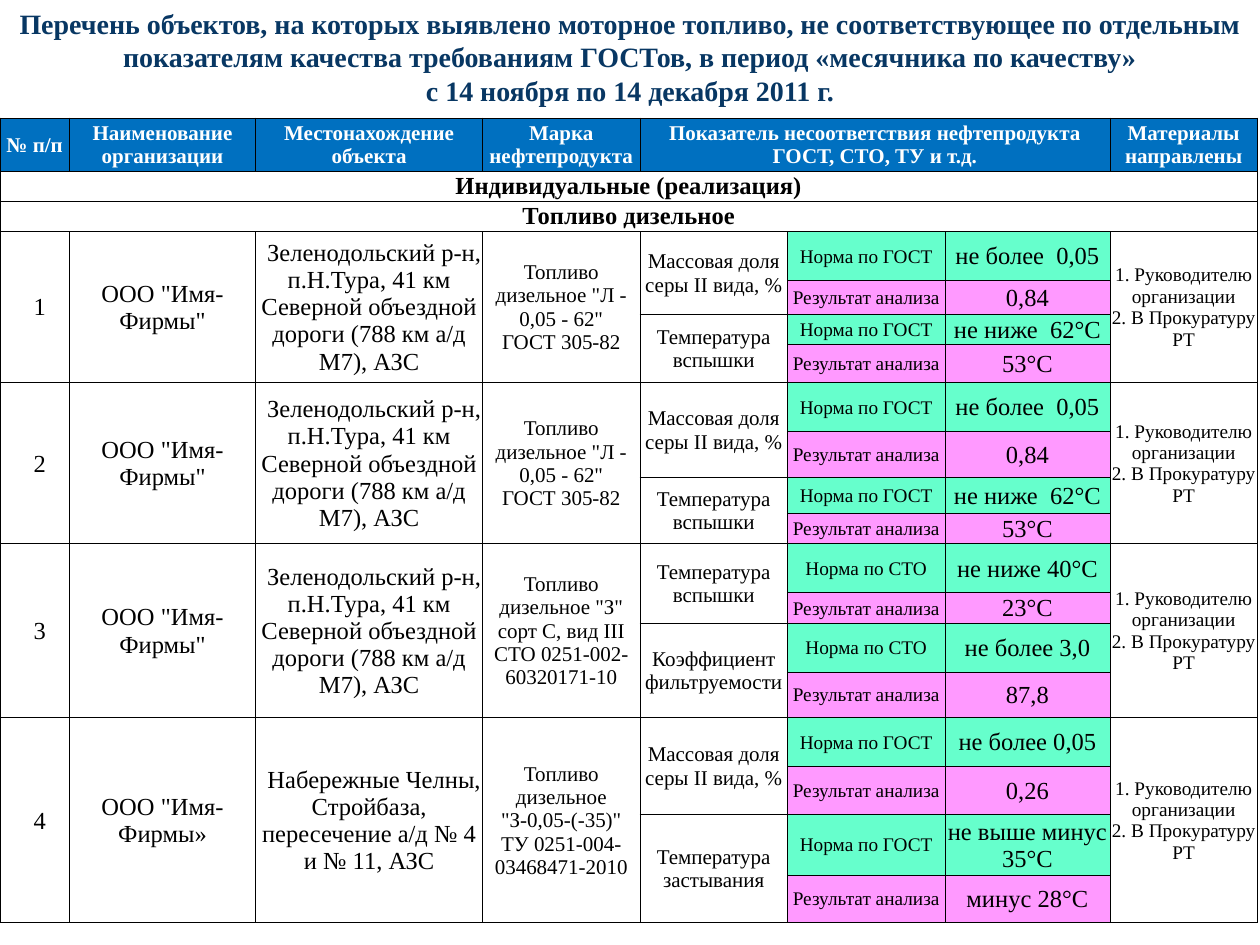
from dataclasses import dataclass

from lxml.etree import SubElement as Sub
from pptx import Presentation
from pptx.dml.color import RGBColor
from pptx.enum.text import MSO_ANCHOR as Anchor, MSO_AUTO_SIZE as Fit, PP_ALIGN as Align
from pptx.oxml.ns import qn
from pptx.util import Inches, Pt

FONT = "Times New Roman"
NAVY = RGBColor(0x08, 0x37, 0x63)
BLUE = RGBColor(0x00, 0x70, 0xC0)
MINT = RGBColor(0x66, 0xFF, 0xCC)
PINK = RGBColor(0xFF, 0x99, 0xFF)
BLACK = RGBColor(0, 0, 0)
WHITE = RGBColor(0xFF, 0xFF, 0xFF)

WIDE, HIGH = Inches(10), Inches(7.5)
TOP = 0.125  # share of the slide's height
COLS = [0.55, 1.48, 1.8, 1.25, 1.17, 1.25, 1.31, 1.17]
HEAD_ROWS = [0.42, 0.24, 0.24]
SPAN = 4  # table rows to one site

TITLE = (
    "Перечень объектов, на которых выявлено моторное топливо, не соответствующее "
    "по отдельным показателям качества требованиям ГОСТов, в период "
    "«месячника по качеству»\nс 14 ноября по 14 декабря 2011 г."
)
HEADS = {
    0: "№ п/п",
    1: "Наименование организации",
    2: "Местонахождение объекта",
    3: "Марка нефтепродукта",
    4: "Показатель несоответствия нефтепродукта ГОСТ, СТО, ТУ и т.д.",
    7: "Материалы направлены",
}
BANDS = ["Индивидуальные (реализация)", "Топливо дизельное"]
SENT = "1. Руководителю организации\n2. В Прокуратуру РТ"
TURA = ("Зеленодольский р-н, п.Н.Тура, 41 км Северной объездной дороги "
        "(788 км а/д М7), АЗС")
CHELNY = "Набережные Челны, Стройбаза, пересечение а/д № 4 и № 11, АЗС"
DIESEL = 'Топливо дизельное "Л - 0,05 - 62"\nГОСТ 305-82'
SULFUR = "Массовая доля серы II вида, %"
FLASH = "Температура вспышки"


@dataclass
class Test:
    name: str
    norm: str
    limit: str
    result: str


@dataclass
class Site:
    firm: str
    place: str
    fuel: str
    tests: list[Test]
    rows: list[float]


@dataclass
class Style:
    size: float = 14
    bold: bool = False
    color: RGBColor = BLACK
    fill: RGBColor = WHITE
    indent: float = 0
    anchor: Anchor = Anchor.MIDDLE


HEAD = Style(12, True, WHITE, BLUE)
BAND = Style(bold=True, anchor=Anchor.TOP)
BODY = Style()
INSET = Style(indent=0.08)
MID = Style(12)
SMALL = Style(11)

SITES = [
    Site('ООО "Имя-Фирмы"', TURA, DIESEL,
         [Test(SULFUR, "ГОСТ", "не более  0,05", "0,84"),
          Test(FLASH, "ГОСТ", "не ниже  62°С", "53°С")],
         [0.39, 0.27, 0.24, 0.3]),
    Site('ООО "Имя-Фирмы"', TURA, DIESEL,
         [Test(SULFUR, "ГОСТ", "не более  0,05", "0,84"),
          Test(FLASH, "ГОСТ", "не ниже  62°С", "53°С")],
         [0.39, 0.36, 0.29, 0.24]),
    Site('ООО "Имя-Фирмы"', TURA,
         'Топливо дизельное "З" сорт С, вид III СТО 0251-002-60320171-10',
         [Test(FLASH, "СТО", "не ниже 40°С", "23°С"),
          Test("Коэффициент фильтруемости", "СТО", "не более 3,0", "87,8")],
         [0.39, 0.24, 0.39, 0.36]),
    Site('ООО "Имя-Фирмы»', CHELNY,
         'Топливо дизельное "З-0,05-(-35)"\nТУ 0251-004-03468471-2010',
         [Test(SULFUR, "ГОСТ", "не более 0,05", "0,26"),
          Test("Температура застывания", "ГОСТ", "не выше минус 35°С", "минус 28°С")],
         [0.39, 0.38, 0.48, 0.38]),
]


def dress(frame, style: Style) -> None:
    """Format all the text of a frame."""
    for para in frame.paragraphs:
        para.alignment = Align.CENTER
        if style.indent:
            para._p.get_or_add_pPr().set("indent", str(Inches(style.indent)))
        for run in para.runs:
            font = run.font
            font.name, font.size, font.bold = FONT, Pt(style.size), style.bold
            font.color.rgb = style.color


def rule(cell) -> None:
    """Draw thin black borders; they must come before the cell's fill."""
    props = cell._tc.get_or_add_tcPr()
    for side in ("lnL", "lnR", "lnT", "lnB"):
        line = Sub(props, qn(f"a:{side}"), w=str(Pt(0.5)))
        Sub(Sub(line, qn("a:solidFill")), qn("a:srgbClr"), val=str(BLACK))


def put(table, row: int, col: int, text: str, style: Style,
        down: int = 1, over: int = 1) -> None:
    cell = table.cell(row, col)
    if down * over > 1:
        cell.merge(table.cell(row + down - 1, col + over - 1))
    cell.text_frame.text = text
    cell.vertical_anchor = style.anchor
    cell.fill.solid()
    cell.fill.fore_color.rgb = style.fill
    dress(cell.text_frame, style)


def put_site(table, row: int, num: int, site: Site) -> None:
    fields = [(0, str(num), INSET), (1, site.firm, BODY), (2, site.place, INSET),
              (3, site.fuel, MID), (7, SENT, SMALL)]
    for col, text, style in fields:
        put(table, row, col, text, style, down=SPAN)
    for i, test in enumerate(site.tests):
        top = row + 2 * i
        put(table, top, 4, test.name, MID, down=2)
        pairs = [(f"Норма по {test.norm}", test.limit, MINT),
                 ("Результат анализа", test.result, PINK)]
        for j, (label, value, fill) in enumerate(pairs):
            put(table, top + j, 5, label, Style(11, fill=fill))
            put(table, top + j, 6, value, Style(fill=fill))


def add_title(slide) -> None:
    title = slide.shapes.title
    title.left, title.top, title.width, title.height = 0, 0, WIDE, int(HIGH * 0.12)
    frame = title.text_frame
    frame.text = TITLE
    frame.word_wrap, frame.auto_size = True, Fit.NONE
    frame.vertical_anchor = Anchor.TOP
    dress(frame, Style(16, True, NAVY))


def add_grid(slide):
    rows = HEAD_ROWS + [high for site in SITES for high in site.rows]
    table = slide.shapes.add_table(
        len(rows), len(COLS), 0, int(HIGH * TOP),
        Inches(sum(COLS)), Inches(sum(rows))).table
    table.first_row = table.horz_banding = False
    for col, wide in zip(table.columns, COLS):
        col.width = Inches(wide)
    for row, high in zip(table.rows, rows):
        row.height = Inches(high)
    for cell in table.iter_cells():
        cell.margin_left = cell.margin_right = cell.margin_top = Inches(0.01)
        cell.margin_bottom = 0
        rule(cell)
    return table


def main() -> None:
    prs = Presentation()
    prs.slide_width, prs.slide_height = WIDE, HIGH
    slide = prs.slides.add_slide(prs.slide_layouts[5])
    add_title(slide)
    table = add_grid(slide)
    for col, text in HEADS.items():
        put(table, 0, col, text, HEAD, over=3 if col == 4 else 1)
    for row, text in enumerate(BANDS, 1):
        put(table, row, 0, text, BAND, over=len(COLS))
    for i, site in enumerate(SITES):
        put_site(table, len(HEAD_ROWS) + SPAN * i, i + 1, site)
    prs.save("out.pptx")


if __name__ == "__main__":
    main()
